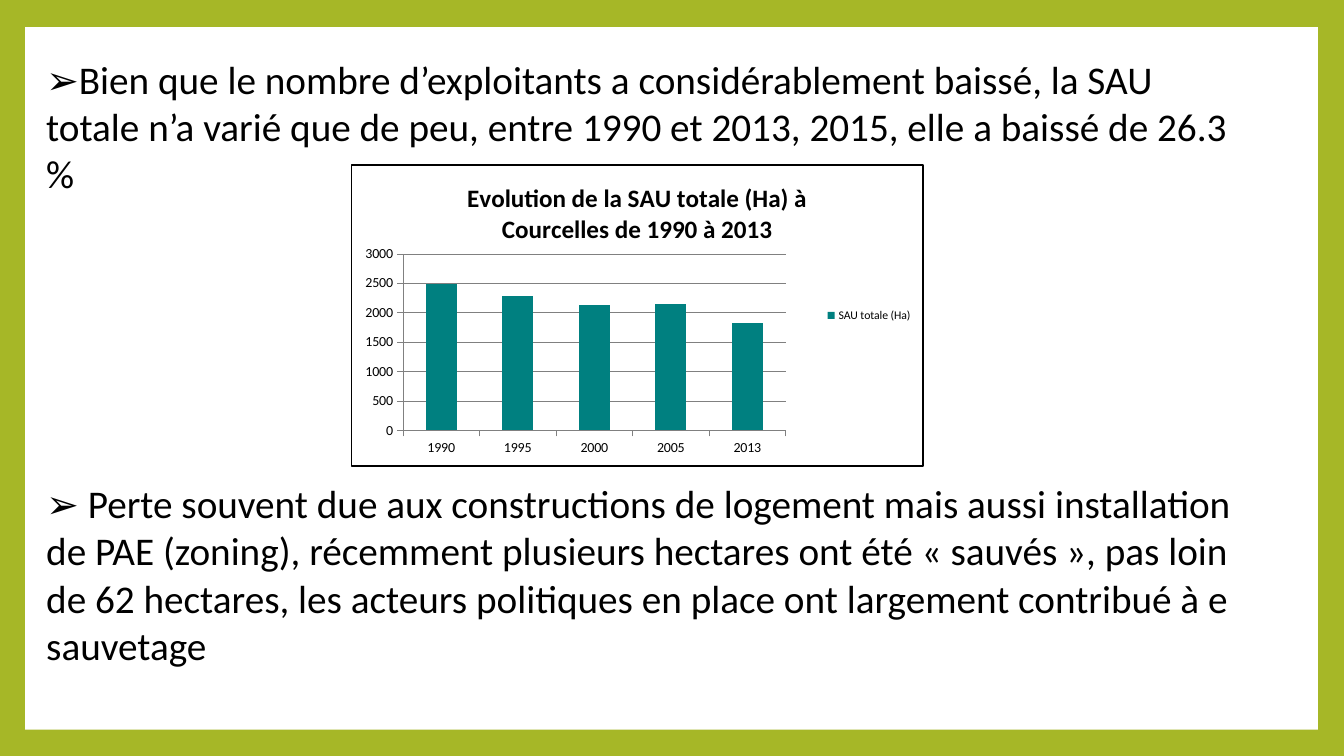
from lxml import etree
from pptx import Presentation
from pptx.chart.data import CategoryChartData
from pptx.dml.color import RGBColor
from pptx.enum.chart import XL_CHART_TYPE, XL_LEGEND_POSITION, XL_TICK_MARK
from pptx.enum.shapes import MSO_SHAPE
from pptx.oxml.ns import qn
from pptx.util import Inches, Pt

COLUMNS = XL_CHART_TYPE.COLUMN_CLUSTERED
RIGHT = XL_LEGEND_POSITION.RIGHT
OUTSIDE = XL_TICK_MARK.OUTSIDE
NO_TICK = XL_TICK_MARK.NONE
RECTANGLE = MSO_SHAPE.RECTANGLE

GREEN = RGBColor(0xA6, 0xB7, 0x27)
TEAL = RGBColor(0x00, 0x80, 0x80)
GRAY = RGBColor(0x80, 0x80, 0x80)
BLACK = RGBColor(0x00, 0x00, 0x00)
WHITE = RGBColor(0xFF, 0xFF, 0xFF)
FONT = "Calibri"


def style_font(font, size, bold=False):
    font.name = FONT
    font.size = Pt(size)
    font.bold = bold
    font.color.rgb = BLACK


def fill_area(element, line_color=None):
    """Give a chart or plot area a white fill and an optional 1 pt border."""
    sp_pr = etree.Element(qn("c:spPr"))
    fill = etree.SubElement(sp_pr, qn("a:solidFill"))
    etree.SubElement(fill, qn("a:srgbClr"), val=str(WHITE))
    line = etree.SubElement(sp_pr, qn("a:ln"), w=str(Pt(1)))
    if line_color is None:
        etree.SubElement(line, qn("a:noFill"))
    else:
        stroke = etree.SubElement(line, qn("a:solidFill"))
        etree.SubElement(stroke, qn("a:srgbClr"), val=str(line_color))
    element.append(sp_pr)
    return sp_pr


prs = Presentation()
prs.slide_width, prs.slide_height = Inches(13.33), Inches(7.5)
s = prs.slides.add_slide(prs.slide_layouts[6])
s.background.fill.solid()
s.background.fill.fore_color.rgb = GREEN

# White panel inside the green frame
panel = s.shapes.add_shape(RECTANGLE, Inches(0.25), Inches(0.27),
                           Inches(12.82), Inches(6.97))
panel.shadow.inherit = False
panel.fill.solid()
panel.fill.fore_color.rgb = WHITE
panel.line.fill.background()

# Statements above and below the chart: top, height, text
statements = [
    (0.5, 1.03, "➢Bien que le nombre d’exploitants a considérablement baissé, "
     "la SAU totale n’a varié que de peu, entre 1990 et 2013, 2015, "
     "elle a baissé de 26.3 %"),
    (4.71, 1.97, "➢ Perte souvent due aux constructions de logement mais aussi "
     "installation de PAE (zoning), récemment plusieurs hectares ont été "
     "« sauvés », pas loin de 62 hectares, les acteurs politiques en place "
     "ont largement contribué à e sauvetage"),
]
for top, height, text in statements:
    box = s.shapes.add_textbox(Inches(0.36), Inches(top),
                               Inches(12.18), Inches(height))
    tf = box.text_frame
    tf.word_wrap = True
    r = tf.paragraphs[0].add_run()
    r.text = text
    style_font(r.font, 28)

# Column chart
data = CategoryChartData()
data.categories = ["1990", "1995", "2000", "2005", "2013"]
data.add_series("SAU totale (Ha)", [2490, 2280, 2130, 2150, 1830])
chart = s.shapes.add_chart(COLUMNS, Inches(3.48), Inches(1.63),
                           Inches(5.68), Inches(3), data).chart
style_font(chart.font, 10)

chart.has_title = True
r = chart.chart_title.text_frame.paragraphs[0].add_run()
r.text = "Evolution de la SAU totale (Ha) à Courcelles de 1990 à 2013"
style_font(r.font, 18, bold=True)
chart.chart_title.include_in_layout = False

chart.has_legend = True
chart.legend.position = RIGHT
chart.legend.include_in_layout = False
style_font(chart.legend.font, 8.4)

plot = chart.plots[0]
plot.gap_width = 150
plot.vary_by_categories = False
series_fill = plot.series[0].format.fill
series_fill.solid()
series_fill.fore_color.rgb = TEAL

values = chart.value_axis
values.minimum_scale, values.maximum_scale, values.major_unit = 0, 3000, 500
values.has_major_gridlines = True
lines = [values.major_gridlines.format.line]
for axis in (chart.category_axis, values):
    axis.major_tick_mark = OUTSIDE
    axis.minor_tick_mark = NO_TICK
    style_font(axis.tick_labels.font, 10)
    lines.append(axis.format.line)
for line in lines:
    line.color.rgb = GRAY
    line.width = Pt(0.25)

# Plot position as shares of the chart, then the area fills
chart_space = chart.element
plot_area = chart_space.find(".//" + qn("c:plotArea"))
for old in plot_area.findall(qn("c:layout")):
    plot_area.remove(old)
layout = etree.Element(qn("c:layout"))
manual = etree.SubElement(layout, qn("c:manualLayout"))
for tag, val in [("layoutTarget", "inner"), ("xMode", "edge"),
                 ("yMode", "edge"), ("x", "0.09"), ("y", "0.295"),
                 ("w", "0.67"), ("h", "0.587")]:
    etree.SubElement(manual, qn("c:" + tag), val=val)
plot_area.insert(0, layout)
fill_area(plot_area)
border = fill_area(chart_space, BLACK)
chart_space.find(qn("c:chart")).addnext(border)

prs.save("out.pptx")
